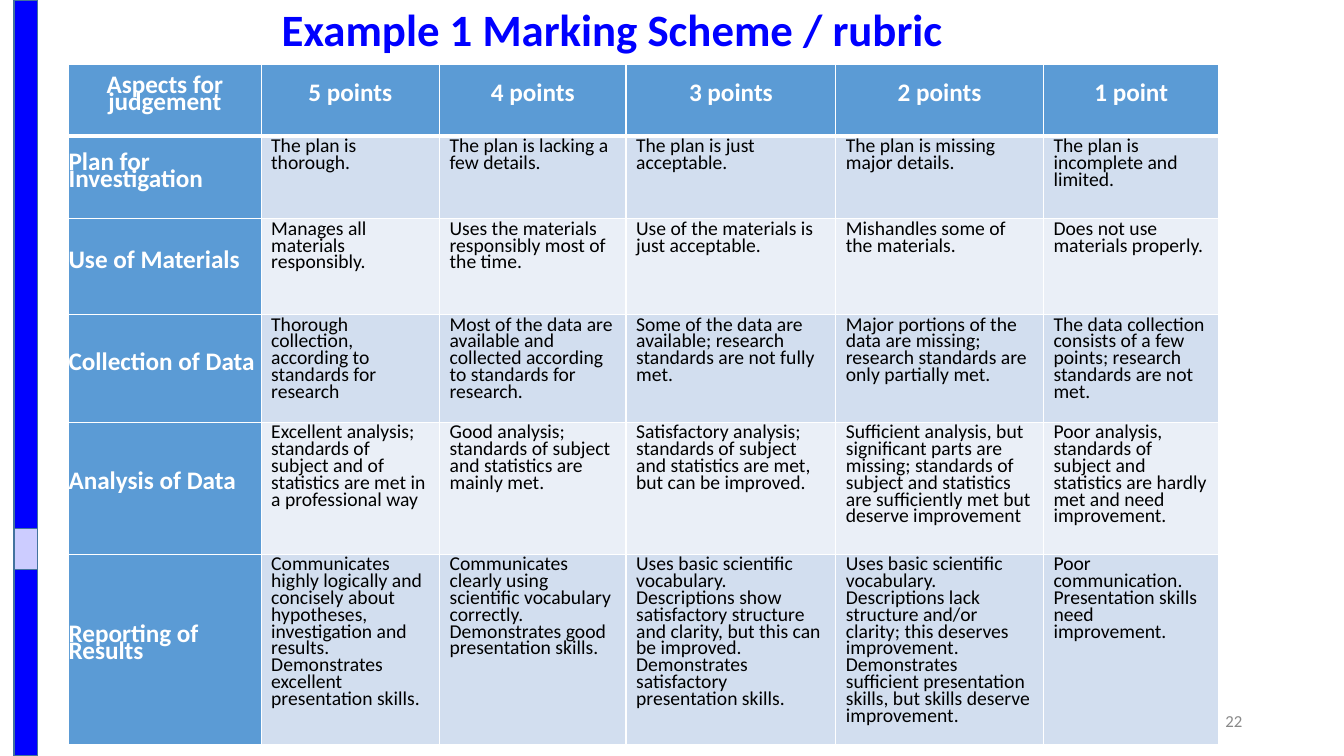
from dataclasses import dataclass

from lxml import etree
from pptx import Presentation
from pptx.dml.color import RGBColor
from pptx.enum.shapes import MSO_SHAPE
from pptx.enum.text import MSO_ANCHOR, MSO_AUTO_SIZE, PP_ALIGN
from pptx.oxml.ns import qn
from pptx.util import Pt

PX = 9144  # 100 px to the inch
RECT = MSO_SHAPE.RECTANGLE
TOP, MIDDLE = MSO_ANCHOR.TOP, MSO_ANCHOR.MIDDLE
LEFT, CENTER, RIGHT = PP_ALIGN.LEFT, PP_ALIGN.CENTER, PP_ALIGN.RIGHT
NO_AUTOFIT = MSO_AUTO_SIZE.NONE


@dataclass(frozen=True)
class Theme:
    font: str = "Calibri"
    title: str = "0000FF"
    bar: str = "0000FF"
    bar_mark: str = "CCCCFF"
    bar_line: str = "43739E"
    head: str = "5B9BD5"
    bands: tuple = ("D2DEEF", "EAEFF7")
    grid: str = "FFFFFF"
    head_text: str = "FFFFFF"
    body_text: str = "000000"
    number: str = "898989"
    title_size: int = 32
    head_size: int = 18
    body_size: int = 14
    number_size: int = 12
    cell_leading: int = 12


T = Theme()
COL_WIDTHS = [191, 177, 185, 208, 206, 174]
ROW_HEIGHTS = [71, 82, 95, 107, 131, 189]
RUBRIC = [
    ["Aspects for judgement", "5 points", "4 points", "3 points", "2 points", "1 point"],
    ["Plan for Investigation",
     "The plan is thorough.",
     "The plan is lacking a few details.",
     "The plan is just acceptable.",
     "The plan is missing major details.",
     "The plan is incomplete and limited."],
    ["Use of Materials",
     "Manages all materials responsibly.",
     "Uses the materials responsibly most of the time.",
     "Use of the materials is just acceptable.",
     "Mishandles some of the materials.",
     "Does not use materials properly."],
    ["Collection of Data",
     "Thorough collection, according to standards for research",
     "Most of the data are available and collected according to standards for research.",
     "Some of the data are available; research standards are not fully met.",
     "Major portions of the data are missing; research standards are only partially met.",
     "The data collection consists of a few points; research standards are not met."],
    ["Analysis of Data",
     "Excellent analysis; standards of subject and of statistics are met in a professional way",
     "Good analysis; standards of subject and statistics are mainly met.",
     "Satisfactory analysis; standards of subject and statistics are met, but can be improved.",
     "Sufficient analysis, but significant parts are missing; standards of subject and "
     "statistics are sufficiently met but deserve improvement",
     "Poor analysis, standards of subject and statistics are hardly met and need improvement."],
    ["Reporting of Results",
     "Communicates highly logically and concisely about hypotheses, investigation and results. "
     "Demonstrates excellent presentation skills.",
     "Communicates clearly using scientific vocabulary correctly. "
     "Demonstrates good presentation skills.",
     "Uses basic scientific vocabulary. Descriptions show satisfactory structure and clarity, "
     "but this can be improved. Demonstrates satisfactory presentation skills.",
     "Uses basic scientific vocabulary. Descriptions lack structure and/or clarity; this "
     "deserves improvement. Demonstrates sufficient presentation skills, but skills deserve "
     "improvement.",
     "Poor communication. Presentation skills need improvement."],
]


def emu(box):
    return [v * PX for v in box]


def set_attrs(obj, values):
    for name, value in values.items():
        setattr(obj, name, value)


def write(tf, text, size, color, bold=False, **paragraph):
    p = tf.paragraphs[0]
    set_attrs(p, paragraph)
    r = p.add_run()
    r.text = text
    set_attrs(r.font, {"name": T.font, "size": Pt(size), "bold": bold})
    r.font.color.rgb = RGBColor.from_string(color)


def add_title(slide, box, text):
    sp = slide.shapes.title
    set_attrs(sp, dict(zip(("left", "top", "width", "height"), emu(box))))
    set_attrs(sp.text_frame, {"auto_size": NO_AUTOFIT, "word_wrap": True,
                              "vertical_anchor": TOP})
    write(sp.text_frame, text, T.title_size, T.title, True,
          alignment=CENTER, line_spacing=0.9)


def add_borders(cell, widths):
    """Draw the left, right, top and bottom borders, widths in points."""
    tc_pr = cell._tc.get_or_add_tcPr()
    for i, (side, width) in enumerate(zip("LRTB", widths)):
        ln = etree.Element(qn(f"a:ln{side}"), w=str(Pt(width)))
        fill = etree.SubElement(ln, qn("a:solidFill"))
        etree.SubElement(fill, qn("a:srgbClr"), val=T.grid)
        tc_pr.insert(i, ln)


def format_cell(cell, row, col, text):
    heading = row == 0 or col == 0
    inset_x, inset_y = (0, 0) if heading else (10 * PX, 5 * PX)
    set_attrs(cell, {"margin_left": inset_x, "margin_right": inset_x,
                     "margin_top": inset_y, "margin_bottom": inset_y,
                     "vertical_anchor": MIDDLE if heading else TOP})
    cell.fill.solid()
    fill = T.head if heading else T.bands[(row - 1) % 2]
    cell.fill.fore_color.rgb = RGBColor.from_string(fill)
    add_borders(cell, (1, 1, 3 if row == 1 else 1, 3 if row == 0 else 1))
    write(cell.text_frame, text,
          T.head_size if heading else T.body_size,
          T.head_text if heading else T.body_text, heading,
          alignment=CENTER if row == 0 else LEFT,
          line_spacing=Pt(T.cell_leading))


def add_rubric(slide, box):
    table = slide.shapes.add_table(len(RUBRIC), len(RUBRIC[0]), *emu(box)).table
    for column, width in zip(table.columns, COL_WIDTHS):
        column.width = width * PX
    for row, height in zip(table.rows, ROW_HEIGHTS):
        row.height = height * PX
    for i, texts in enumerate(RUBRIC):
        for j, text in enumerate(texts):
            format_cell(table.cell(i, j), i, j, text)


def add_page_number(slide, box, text):
    tf = slide.shapes.add_textbox(*emu(box)).text_frame
    set_attrs(tf, {"word_wrap": True, "vertical_anchor": MIDDLE})
    write(tf, text, T.number_size, T.number, alignment=RIGHT)


def add_side_bar(slide, box):
    left, top, width, height = box
    mark = (left, top + 524, width, 41)
    for part, color in ((box, T.bar), (mark, T.bar_mark)):
        sp = slide.shapes.add_shape(RECT, *emu(part))
        sp.shadow.inherit = False
        sp.fill.solid()
        sp.fill.fore_color.rgb = RGBColor.from_string(color)
        sp.line.color.rgb = RGBColor.from_string(T.bar_line)
        sp.line.width = Pt(1)


def build_rubric_slide(prs):
    slide = prs.slides.add_slide(prs.slide_layouts.get_by_name("Title Only"))
    add_title(slide, (264, 3, 687, 90), "Example 1 Marking Scheme / rubric")
    add_rubric(slide, (68, 64, sum(COL_WIDTHS), sum(ROW_HEIGHTS)))
    add_page_number(slide, (942, 695, 300, 40), "22")
    add_side_bar(slide, (14, 0, 23, 750))


def main():
    prs = Presentation()
    set_attrs(prs, {"slide_width": 1333 * PX, "slide_height": 750 * PX})
    build_rubric_slide(prs)
    prs.save("out.pptx")


if __name__ == "__main__":
    main()
